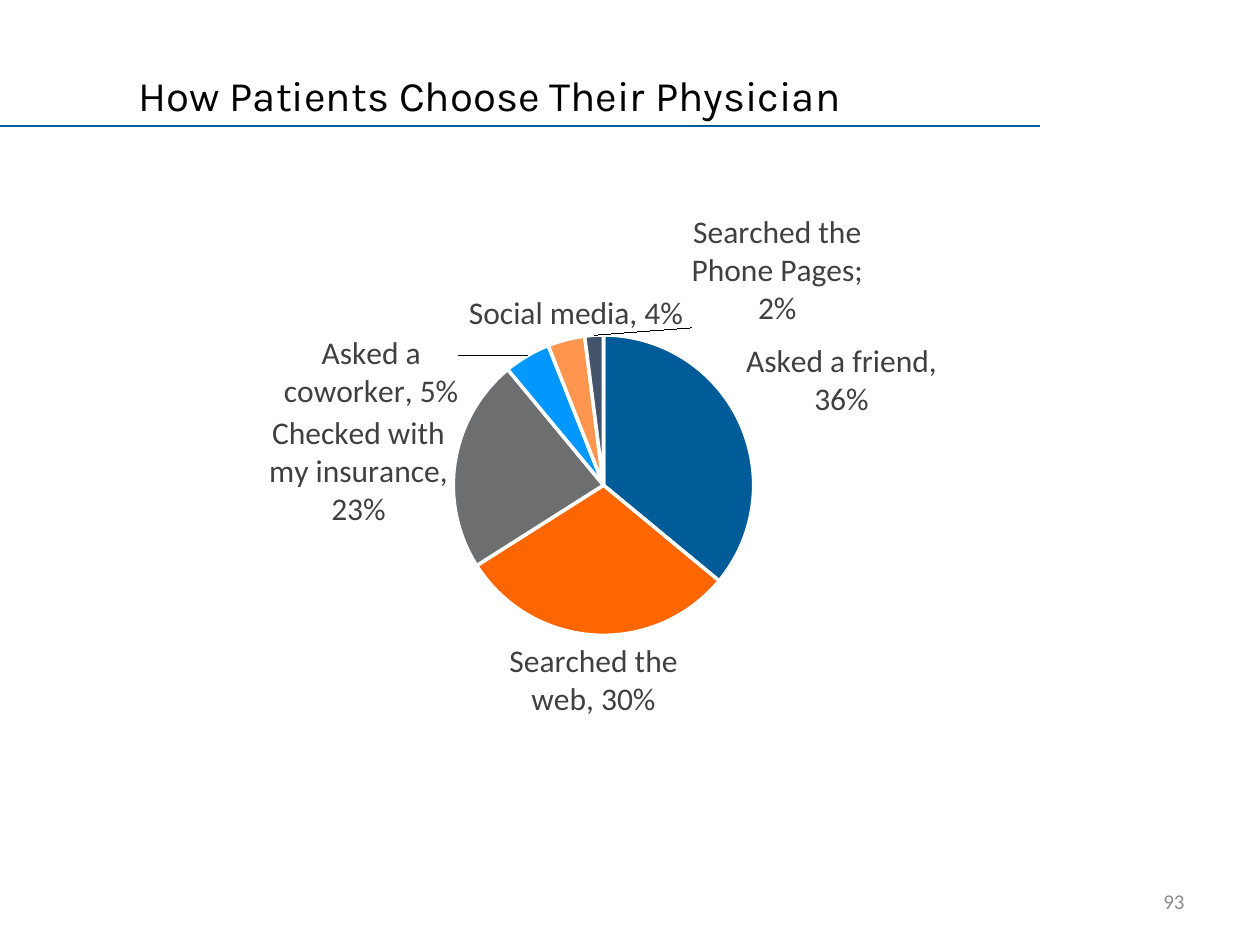
from dataclasses import dataclass

from lxml import etree
from pptx import Presentation
from pptx.chart.data import CategoryChartData
from pptx.dml.color import RGBColor
from pptx.enum import chart as charts, shapes, text
from pptx.oxml import ns
from pptx.util import Inches, Pt


@dataclass(frozen=True)
class Theme:
    """Colours, fonts and type sizes of the slide."""
    rule: str = "005B99"
    title: str = "000000"
    label: str = "404040"
    number: str = "8C8C8C"
    gap: str = "FFFFFF"
    title_font: str = "Karla"
    body_font: str = "Calibri"
    title_size: int = 24
    label_size: int = 18
    number_size: int = 12


THEME = Theme()
WIDTH, HEIGHT = Inches(10), Inches(7.5)
SLICES = [
    ("Asked a Friend", 0.36, "005B99", "Asked a friend, 36%", None),
    ("Searched theWeb", 0.30, "FF6600", "Searched the web, 30%", None),
    ("Checked with My Insurance", 0.23, "6D6E70", "Checked with my insurance, 23%", (0, 0.1)),
    ("Asked a Coworker", 0.05, "0097FE", "Asked a coworker, 5%", (-0.06, 0.09)),
    ("Social Media", 0.04, "FF964F", "Social media, 4%", (0.11, 0)),
    ("Searched the Phone Pages", 0.02, "44546A", "Searched the Phone Pages; 2%", (0.17, 0)),
]


def style_font(font, name, size, color):
    """Apply a typeface, size and colour to a font."""
    for attribute, value in {"name": name, "size": Pt(size), "bold": False}.items():
        setattr(font, attribute, value)
    font.color.rgb = RGBColor.from_string(color)


def add_text(slide, box, words, alignment, **font_format):
    """Place one line of text, centred vertically in the box."""
    frame = slide.shapes.add_textbox(*box).text_frame
    for attribute, value in {"word_wrap": True, "vertical_anchor": text.MSO_ANCHOR.MIDDLE}.items():
        setattr(frame, attribute, value)
    paragraph = frame.paragraphs[0]
    paragraph.alignment = alignment
    run = paragraph.add_run()
    run.text = words
    style_font(run.font, **font_format)


def add_heading(slide, box, words):
    """Place the title with a rule from the slide edge beneath it."""
    left, top, width, height = box
    bottom = top + height
    rule = slide.shapes.add_connector(
        shapes.MSO_CONNECTOR.STRAIGHT, 0, bottom, int(WIDTH * 0.825), bottom)
    rule.line.color.rgb = RGBColor.from_string(THEME.rule)
    rule.line.width = Pt(0.75)
    etree.SubElement(rule._element.spPr, ns.qn("a:effectLst"))
    add_text(slide, box, words, text.PP_ALIGN.LEFT, name=THEME.title_font,
             size=THEME.title_size, color=THEME.title)


def manual_layout(**values):
    """Build a chart layout element from named values."""
    layout = etree.Element(ns.qn("c:layout"))
    manual = etree.SubElement(layout, ns.qn("c:manualLayout"))
    for tag, value in values.items():
        etree.SubElement(manual, ns.qn(f"c:{tag}")).set("val", str(value))
    return layout


def style_slice(point, color, words, offset):
    """Colour one slice and write its label, shifted by a share of the chart."""
    point.format.fill.solid()
    point.format.fill.fore_color.rgb = RGBColor.from_string(color)
    point.format.line.color.rgb = RGBColor.from_string(THEME.gap)
    point.format.line.width = Pt(2)
    label = point.data_label
    run = label.text_frame.paragraphs[0].add_run()
    run.text = words
    style_font(run.font, THEME.body_font, THEME.label_size, THEME.label)
    label.position = charts.XL_LABEL_POSITION.OUTSIDE_END
    if offset:
        element = label._dLbl
        element.find(ns.qn("c:idx")).addnext(manual_layout(x=offset[0], y=offset[1]))


def add_pie(slide, box):
    """Place the pie chart with its outside labels in the box."""
    data = CategoryChartData(number_format="0%")
    data.categories = [entry[0] for entry in SLICES]
    data.add_series("Series 1", [entry[1] for entry in SLICES])
    chart = slide.shapes.add_chart(charts.XL_CHART_TYPE.PIE, *box, data).chart
    chart.has_legend = chart.has_title = False
    style_font(chart.font, THEME.body_font, THEME.label_size, THEME.title)
    plot = chart.plots[0]
    plot.vary_by_categories = True
    series = plot.series[0]
    labels = series.data_labels
    for attribute, value in {"show_value": True, "show_category_name": True,
                             "number_format": "0%", "number_format_is_linked": False,
                             "position": charts.XL_LABEL_POSITION.OUTSIDE_END}.items():
        setattr(labels, attribute, value)
    style_font(labels.font, THEME.body_font, THEME.label_size, THEME.label)
    leader = labels._element.find(ns.qn("c:showLeaderLines"))
    if leader is None:
        leader = etree.SubElement(labels._element, ns.qn("c:showLeaderLines"))
    leader.set("val", "1")
    for index, (_, _, *look) in enumerate(SLICES):
        style_slice(series.points[index], *look)
    area = chart._chartSpace.chart.plotArea
    for layout in area.findall(ns.qn("c:layout")):
        area.remove(layout)
    area.insert(0, manual_layout(layoutTarget="inner", xMode="edge", yMode="edge",
                                 x=0.093, y=0.201, w=0.814, h=0.444))


def share(left, top, width, height):
    """Turn shares of the slide's size into a box."""
    return (int(WIDTH * left), int(HEIGHT * top), int(WIDTH * width), int(HEIGHT * height))


def main():
    """Build and save the slide."""
    presentation = Presentation()
    presentation.slide_width, presentation.slide_height = WIDTH, HEIGHT
    slide = presentation.slides.add_slide(presentation.slide_layouts[6])
    add_heading(slide, share(0.1, 1 / 15, 0.7, 1 / 15), "How Patients Choose Their Physician")
    add_pie(slide, (Inches(0.5), Inches(1.58), Inches(8.58), Inches(5.37)))
    add_text(slide, (Inches(7.17), Inches(6.95), Inches(2.33), Inches(0.4)), "93",
             text.PP_ALIGN.RIGHT, name=THEME.body_font, size=THEME.number_size, color=THEME.number)
    presentation.save("out.pptx")


if __name__ == "__main__":
    main()
